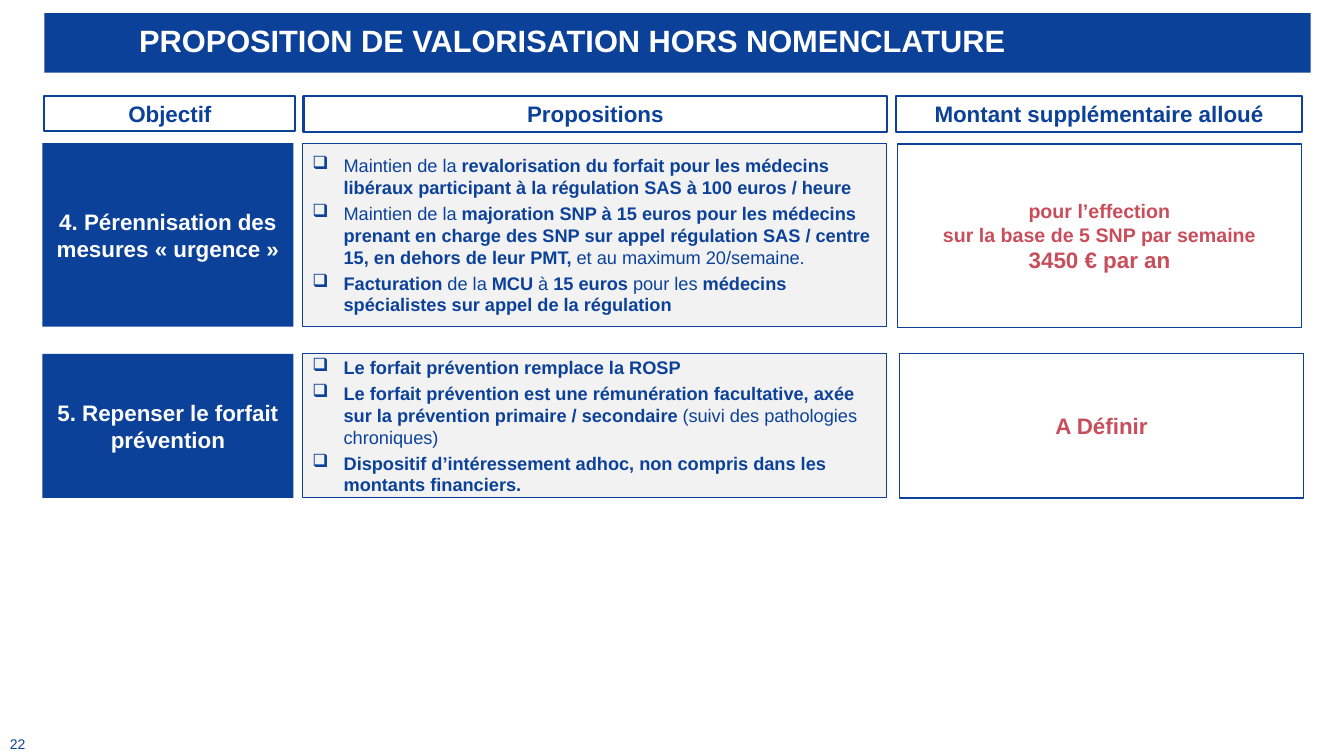
from lxml.etree import SubElement
from pptx import Presentation
from pptx.dml.color import RGBColor as RGB
from pptx.enum.shapes import MSO_SHAPE as SHAPE
from pptx.enum.text import MSO_ANCHOR as ANCHOR, PP_ALIGN as ALIGN
from pptx.oxml.ns import qn
from pptx.util import Pt

PX = 9144
THEME = {
    "font": "Arial",
    "blue": RGB.from_string("0C419A"),
    "grey": RGB.from_string("F2F2F2"),
    "white": RGB.from_string("FFFFFF"),
    "red": RGB.from_string("C74E5A"),
    "title": 22,
    "heading": 16,
    "note": 14,
    "body": 13,
    "number": 10,
}


def add_box(box, fill=None, line=None):
    sp = s.shapes.add_shape(SHAPE.RECTANGLE, *[v * PX for v in box])
    sp.shadow.inherit = False
    if fill is None:
        sp.fill.background()
    else:
        sp.fill.solid()
        sp.fill.fore_color.rgb = THEME[fill]
    if line is None:
        sp.line.fill.background()
    else:
        sp.line.color.rgb = THEME["blue"]
        sp.line.width = Pt(line)
    sp.text_frame.word_wrap = True
    sp.text_frame.vertical_anchor = ANCHOR.MIDDLE
    return sp.text_frame


def write(tf, lines, color, align=ALIGN.CENTER, bullet=None):
    for i, (text, size) in enumerate(lines):
        p = tf.paragraphs[0] if i == 0 else tf.add_paragraph()
        p.alignment = align
        if bullet:
            pPr = p._p.get_or_add_pPr()
            pPr.set("marL", str(31 * PX))
            pPr.set("indent", str(-31 * PX))
            SubElement(pPr, qn("a:buChar")).set("char", bullet)
            if i:
                p.space_before = Pt(3)
        for k, part in enumerate(text.split("**")):
            if part:
                r = p.add_run()
                r.text = part
                r.font.name = THEME["font"]
                r.font.size = Pt(THEME[size])
                r.font.bold = k % 2 == 1
                r.font.color.rgb = THEME[color]


prs = Presentation()
prs.slide_width, prs.slide_height = 1333 * PX, 750 * PX
s = prs.slides.add_slide(prs.slide_layouts[6])

tf = add_box((44, 13, 1256, 59), "blue")
tf.margin_left = 94 * PX
tf.margin_top = tf.margin_right = tf.margin_bottom = 8 * PX
write(tf, [("**PROPOSITION DE VALORISATION HORS NOMENCLATURE**", "title")], "white", ALIGN.LEFT)
tf.paragraphs[0].line_spacing = 0.9

headers = [
    ("Objectif", 44, 249, 35),
    ("Propositions", 301, 579, 36),
    ("Montant supplémentaire alloué", 889, 402, 36),
]
for text, left, width, height in headers:
    tf = add_box((left, 95, width, height), "white", 1.5)
    write(tf, [(f"**{text}**", "heading")], "blue")

rows = [
    {
        "top": 142,
        "height": 182,
        "goal": "4. Pérennisation des mesures « urgence »",
        "proposals": [
            "Maintien de la** revalorisation du forfait pour les médecins libéraux participant "
            "à la régulation SAS à 100 euros / heure**",
            "Maintien de la **majoration SNP à 15 euros pour les médecins prenant en charge des SNP "
            "sur appel régulation SAS / centre 15, en dehors de leur PMT, **et au maximum 20/semaine.",
            "**Facturation **de la **MCU **à** 15 euros **pour les "
            "**médecins spécialistes sur appel de la régulation**",
        ],
        "amount_at": (890, 143),
        "amount": [
            ("**pour l’effection**", "note"),
            ("**sur la base de 5 SNP par semaine**", "note"),
            ("**3450 € par an**", "heading"),
        ],
    },
    {
        "top": 351,
        "height": 143,
        "goal": "5. Repenser le forfait prévention",
        "proposals": [
            "**Le forfait prévention remplace la ROSP**",
            "**Le forfait prévention est une rémunération facultative, axée sur la prévention "
            "primaire / secondaire **(suivi des pathologies chroniques)",
            "**Dispositif d’intéressement adhoc, non compris dans les montants financiers.**",
        ],
        "amount_at": (892, 351),
        "amount": [("**A Définir**", "heading")],
    },
]
for row in rows:
    top, height = row["top"], row["height"]
    tf = add_box((42, top, 249, height), "blue")
    write(tf, [(f"**{row['goal']}**", "heading")], "white")
    tf = add_box((300, top, 579, height), "grey", 0.75)
    write(tf, [(text, "body") for text in row["proposals"]], "blue", ALIGN.LEFT, "❑")
    tf = add_box((*row["amount_at"], 401, height), line=1)
    write(tf, row["amount"], "red")

tf = s.shapes.add_textbox(0, 720 * PX, 79 * PX, 31 * PX).text_frame
tf.word_wrap = True
tf.vertical_anchor = ANCHOR.BOTTOM
write(tf, [("22", "number")], "blue", ALIGN.LEFT)

prs.save("out.pptx")
